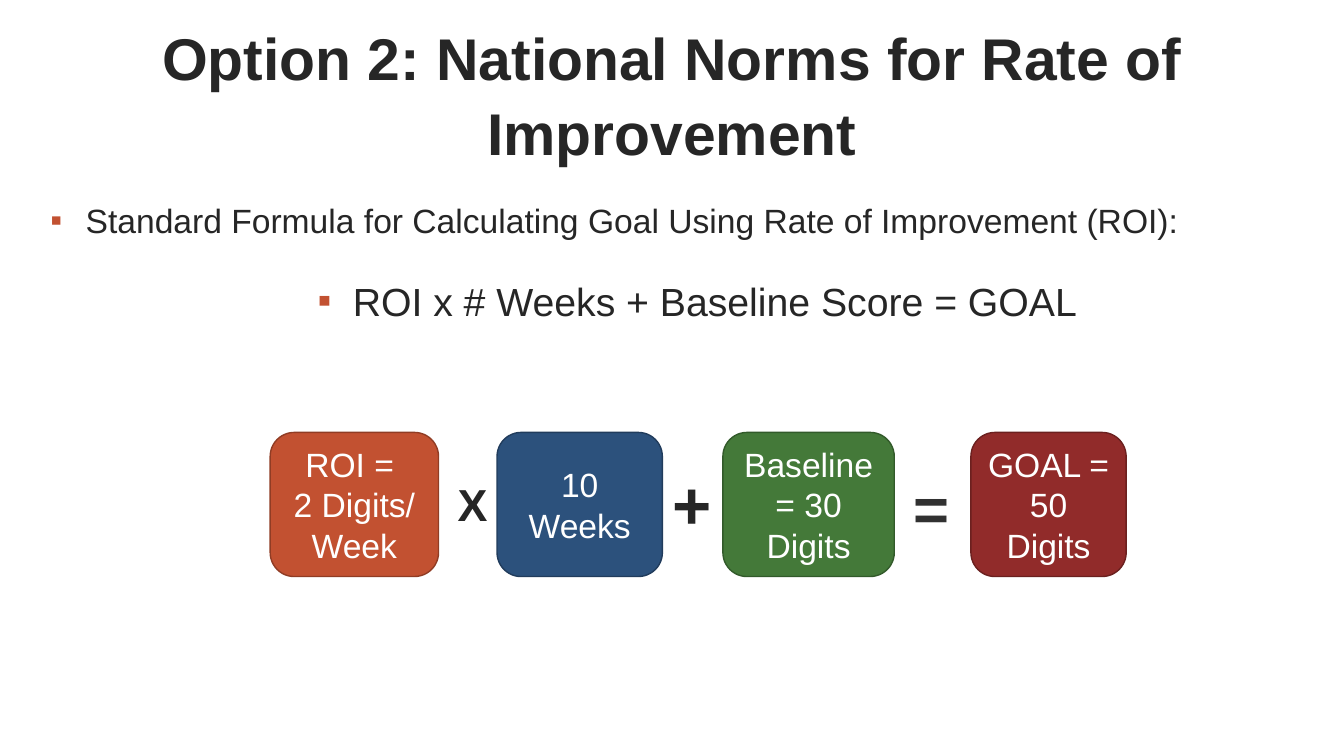
from lxml.etree import SubElement
from pptx import Presentation
from pptx.dml.color import RGBColor
from pptx.enum.shapes import MSO_SHAPE
from pptx.enum.text import MSO_ANCHOR, MSO_AUTO_SIZE, PP_ALIGN
from pptx.oxml.ns import qn
from pptx.util import Inches, Pt

INK = "262626"
WHITE = "FFFFFF"
RUST = "C25131"
CARD_TOP, CARD_HEIGHT = 4.29, 1.43


def color(value):
    return RGBColor.from_string(value)


def style(para, size, ink=INK, bold=False, align=None):
    para.alignment = align
    for span in para.runs:
        span.font.name = "Arial"
        span.font.size = Pt(size)
        span.font.bold = bold
        span.font.color.rgb = color(ink)


def add_text_frame(page, left, top, width, height):
    """Wrapping text box without margins."""
    box = page.shapes.add_textbox(Inches(left), Inches(top), Inches(width), Inches(height))
    frame = box.text_frame
    frame.word_wrap = True
    frame.margin_left = frame.margin_right = 0
    frame.margin_top = frame.margin_bottom = 0
    return frame


def add_bullet(para):
    properties = para._p.get_or_add_pPr()
    properties.set("marL", str(Inches(0.35)))
    properties.set("indent", str(-Inches(0.35)))
    bullet_color = SubElement(properties, qn("a:buClr"))
    SubElement(bullet_color, qn("a:srgbClr")).set("val", RUST)
    SubElement(properties, qn("a:buFont")).set("typeface", "Arial")
    SubElement(properties, qn("a:buChar")).set("char", "▪")


def add_title(page, text):
    frame = add_text_frame(page, 0.5, 0.22, 12.33, 1.4)
    frame.vertical_anchor = MSO_ANCHOR.MIDDLE
    frame.text = text
    frame.paragraphs[0].line_spacing = 1.05
    style(frame.paragraphs[0], 42, bold=True, align=PP_ALIGN.CENTER)


def add_body(page, lines):
    frame = add_text_frame(page, 0.5, 1.88, 12.83, 4.88)
    frame.text = "\n".join(text for text, size, align in lines)
    for index, (para, (text, size, align)) in enumerate(zip(frame.paragraphs, lines)):
        add_bullet(para)
        para.line_spacing = 1.25
        if index:
            para.space_before = Pt(18)
        style(para, size, align=align)


def add_card(page, left, width, text, fill, line):
    card = page.shapes.add_shape(MSO_SHAPE.ROUNDED_RECTANGLE, Inches(left), Inches(CARD_TOP),
                                 Inches(width), Inches(CARD_HEIGHT))
    card.shadow.inherit = False
    card.fill.solid()
    card.fill.fore_color.rgb = color(fill)
    card.line.color.rgb = color(line)
    card.line.width = Pt(1)
    frame = card.text_frame
    frame.word_wrap = True
    frame.vertical_anchor = MSO_ANCHOR.MIDDLE
    frame.text = text
    for para in frame.paragraphs:
        style(para, 24, WHITE, align=PP_ALIGN.CENTER)


def add_operator(page, left, top, width, height, text, size, ink=INK):
    box = page.shapes.add_textbox(Inches(left), Inches(top), Inches(width), Inches(height))
    frame = box.text_frame
    frame.word_wrap = True
    frame.auto_size = MSO_AUTO_SIZE.SHAPE_TO_FIT_TEXT
    frame.text = text
    style(frame.paragraphs[0], size, ink, bold=True)


def main():
    deck = Presentation()
    deck.slide_width, deck.slide_height = Inches(13.33), Inches(7.5)
    page = deck.slides.add_slide(deck.slide_layouts[6])

    # Title and general formula
    add_title(page, "Option 2: National Norms for Rate of Improvement")
    add_body(page, [
        ("Standard Formula for Calculating Goal Using Rate of Improvement (ROI):", 24, None),
        ("ROI x # Weeks + Baseline Score = GOAL", 28, PP_ALIGN.CENTER),
    ])

    # Worked example: values joined by operators
    add_card(page, 2.68, 1.67, "ROI = \n2 Digits/\nWeek", RUST, "903C24")
    add_operator(page, 4.44, 4.68, 0.54, 0.64, "X", 32)
    add_card(page, 4.93, 1.64, "10 Weeks", "2C517C", "213C5C")
    add_operator(page, 6.57, 4.54, 0.74, 0.91, "+", 48)
    add_card(page, 7.17, 1.7, "Baseline = 30 Digits", "447939", "325A2A")
    add_operator(page, 8.96, 4.61, 0.82, 0.84, "=", 44, "313131")
    add_card(page, 9.63, 1.54, "GOAL = 50 Digits", "912B2A", "6B201F")

    deck.save("out.pptx")


if __name__ == "__main__":
    main()
